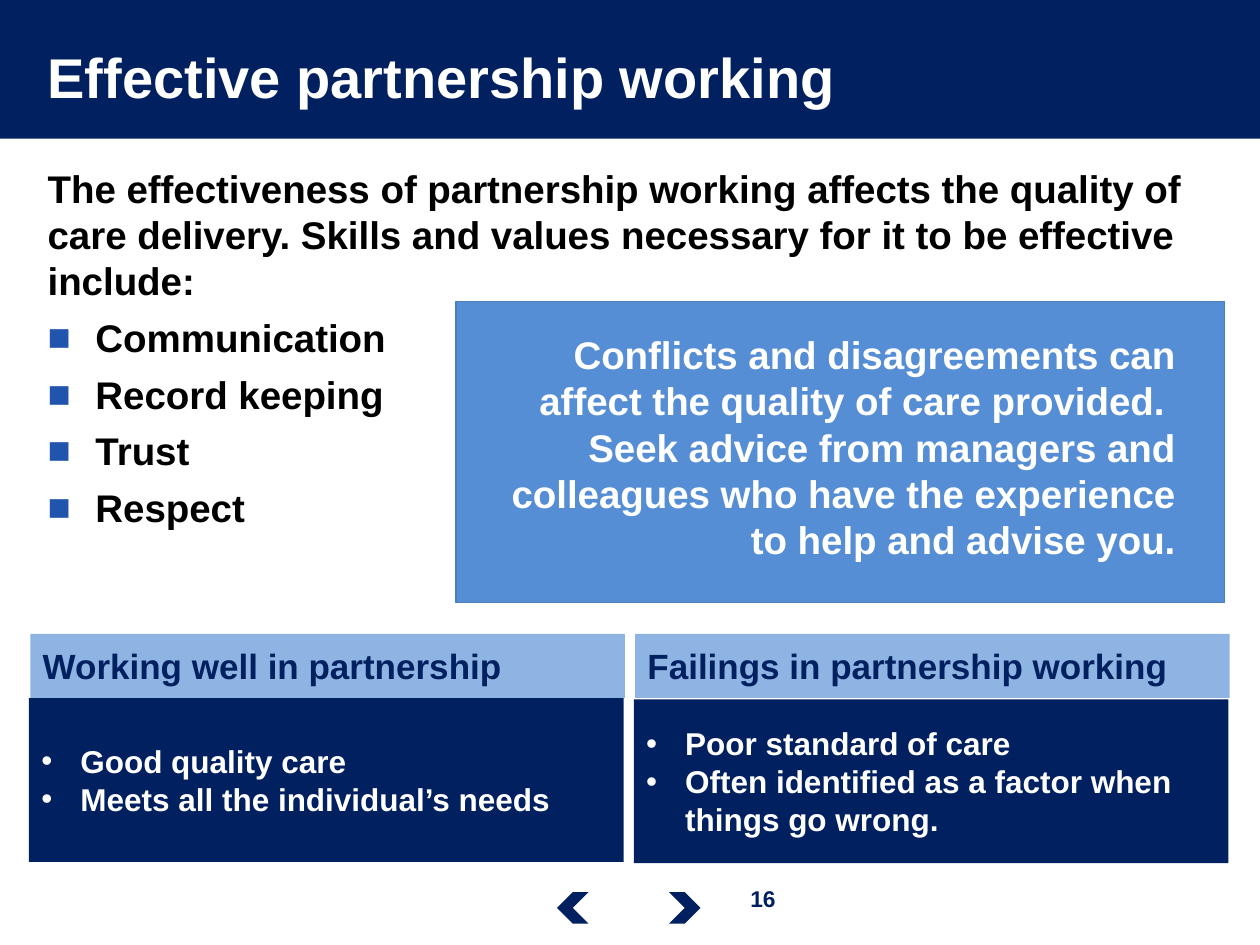
"""Build the slide on effective partnership working."""
from lxml import etree
from pptx import Presentation
from pptx.dml.color import RGBColor
from pptx.enum.shapes import MSO_SHAPE as Shape
from pptx.enum.text import MSO_ANCHOR as Anchor, PP_ALIGN as Align
from pptx.oxml.ns import qn
from pptx.util import Inches, Pt

COLORS = {
    "navy": "002060", "white": "FFFFFF", "black": "000000", "panel": "558ED5",
    "panel_edge": "4B7EBC", "heading": "8EB4E3", "bullet": "2154AC",
}


def add_block(kind, left, top, width, height, fill):
    block = slide.shapes.add_shape(
        kind, Inches(left), Inches(top), Inches(width), Inches(height))
    block.shadow.inherit = False
    block.fill.solid()
    block.fill.fore_color.rgb = RGBColor.from_string(COLORS[fill])
    block.line.fill.background()
    return block


def write(shape, lines, size, color, align=Align.LEFT, anchor=Anchor.MIDDLE,
          bullet=None, bullet_color=None, indent=0, plain=0, gap=0):
    frame = shape.text_frame
    frame.word_wrap = True
    frame.vertical_anchor = anchor
    for index, line in enumerate(lines):
        paragraph = frame.add_paragraph() if index else frame.paragraphs[0]
        paragraph.text = line
        paragraph.alignment = align
        if index:
            paragraph.space_before = Pt(gap)
        if bullet and index >= plain:
            props = paragraph._p.get_or_add_pPr()
            props.set("marL", str(Inches(indent)))
            props.set("indent", str(-Inches(indent)))
            if bullet_color:
                tint = etree.SubElement(props, qn("a:buClr"))
                etree.SubElement(tint, qn("a:srgbClr"), val=COLORS[bullet_color])
            etree.SubElement(props, qn("a:buFont"), typeface="Arial")
            etree.SubElement(props, qn("a:buChar"), char=bullet)
        font = paragraph.font
        font.name, font.size, font.bold = "Arial", Pt(size), True
        font.color.rgb = RGBColor.from_string(COLORS[color])


deck = Presentation()
deck.slide_width, deck.slide_height = Inches(10), Inches(7.5)
slide = deck.slides.add_slide(deck.slide_layouts[6])

add_block(Shape.RECTANGLE, -0.02, 0, 10.02, 1.1, "navy")
add_block(Shape.CHEVRON, 5.31, 7.08, 0.25, 0.25, "navy")
back_arrow = add_block(Shape.CHEVRON, 4.42, 7.08, 0.25, 0.25, "navy")
back_arrow.rotation = 180
advice_panel = add_block(Shape.RECTANGLE, 3.62, 2.39, 6.1, 2.39, "panel")
advice_panel.line.color.rgb = RGBColor.from_string(COLORS["panel_edge"])
advice_panel.line.width = Pt(0.75)

page_number = slide.shapes.add_textbox(
    Inches(5.7), Inches(6.97), Inches(0.71), Inches(0.32))
write(page_number, ["16"], 13, "navy", Align.CENTER, Anchor.TOP)

title = slide.shapes.add_textbox(Inches(0.28), Inches(0.1), Inches(9.4), Inches(1.01))
write(title, ["Effective partnership working"], 32, "white")

skills = slide.shapes.add_textbox(Inches(0.28), Inches(1.26), Inches(9.4), Inches(3.22))
write(skills, [
    "The effectiveness of partnership working affects the quality of care delivery. "
    "Skills and values necessary for it to be effective include:",
    "Communication", "Record keeping", "Trust", "Respect",
], 22, "black", anchor=Anchor.TOP, bullet="■", bullet_color="bullet",
    indent=0.38, plain=1, gap=6)

advice = slide.shapes.add_textbox(Inches(3.73), Inches(2.58), Inches(5.7), Inches(1.95))
write(advice, [
    "Conflicts and disagreements can affect the quality of care provided.  "
    "Seek advice from managers and colleagues who have the experience "
    "to help and advise you.",
], 22, "white", Align.RIGHT, Anchor.TOP)

outcomes = [
    (0.24, 5.54, "Working well in partnership",
     ["Good quality care", "Meets all the individual’s needs"]),
    (5.04, 5.55, "Failings in partnership working",
     ["Poor standard of care", "Often identified as a factor when things go wrong."]),
]
for left, top, heading, points in outcomes:
    heading_bar = add_block(Shape.RECTANGLE, left, 5.03, 4.72, 0.51, "heading")
    write(heading_bar, [heading], 20, "navy")
    points_box = add_block(Shape.RECTANGLE, left - 0.01, top, 4.72, 1.3, "navy")
    write(points_box, points, 18, "white", bullet="•", indent=0.31)

deck.save("out.pptx")
